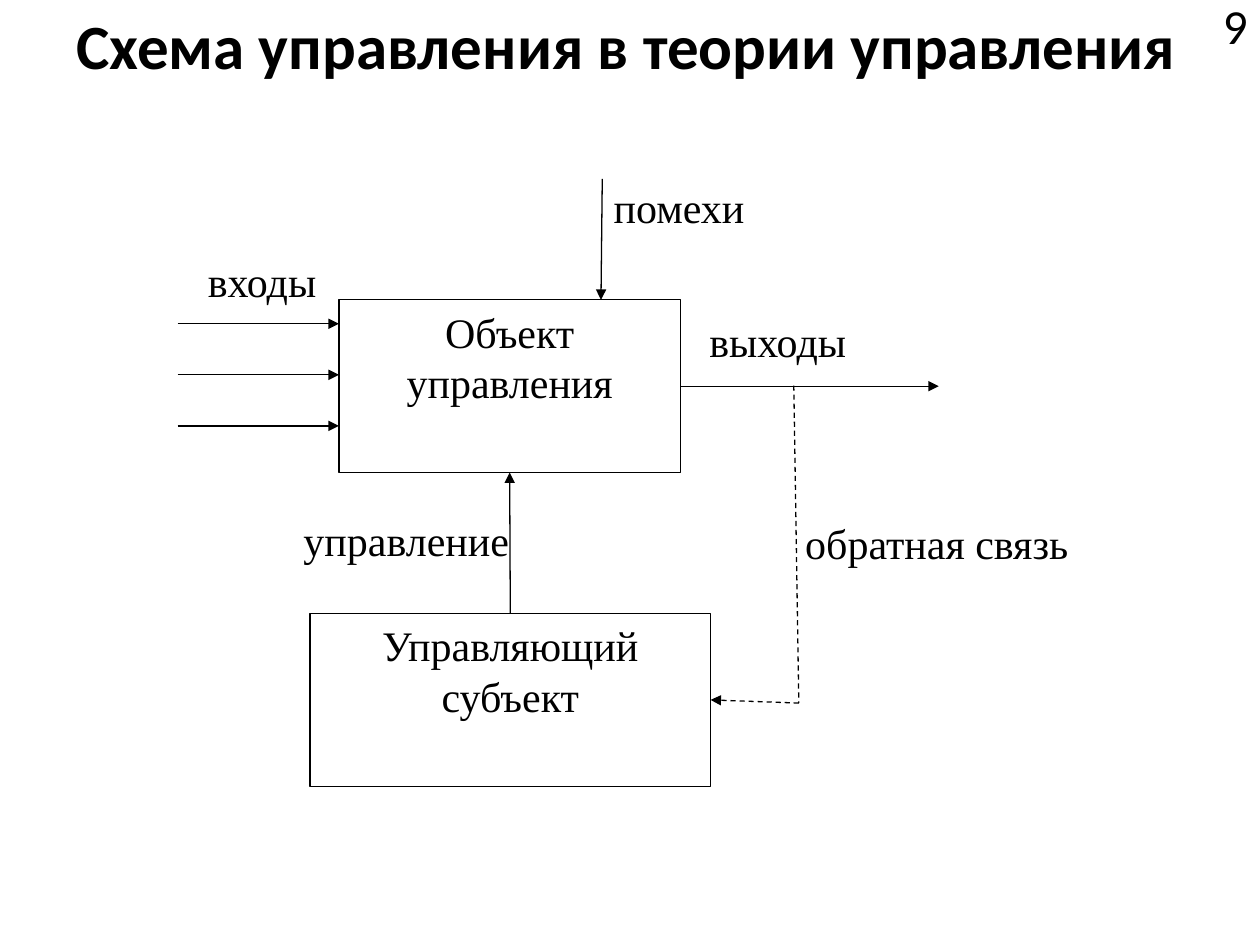
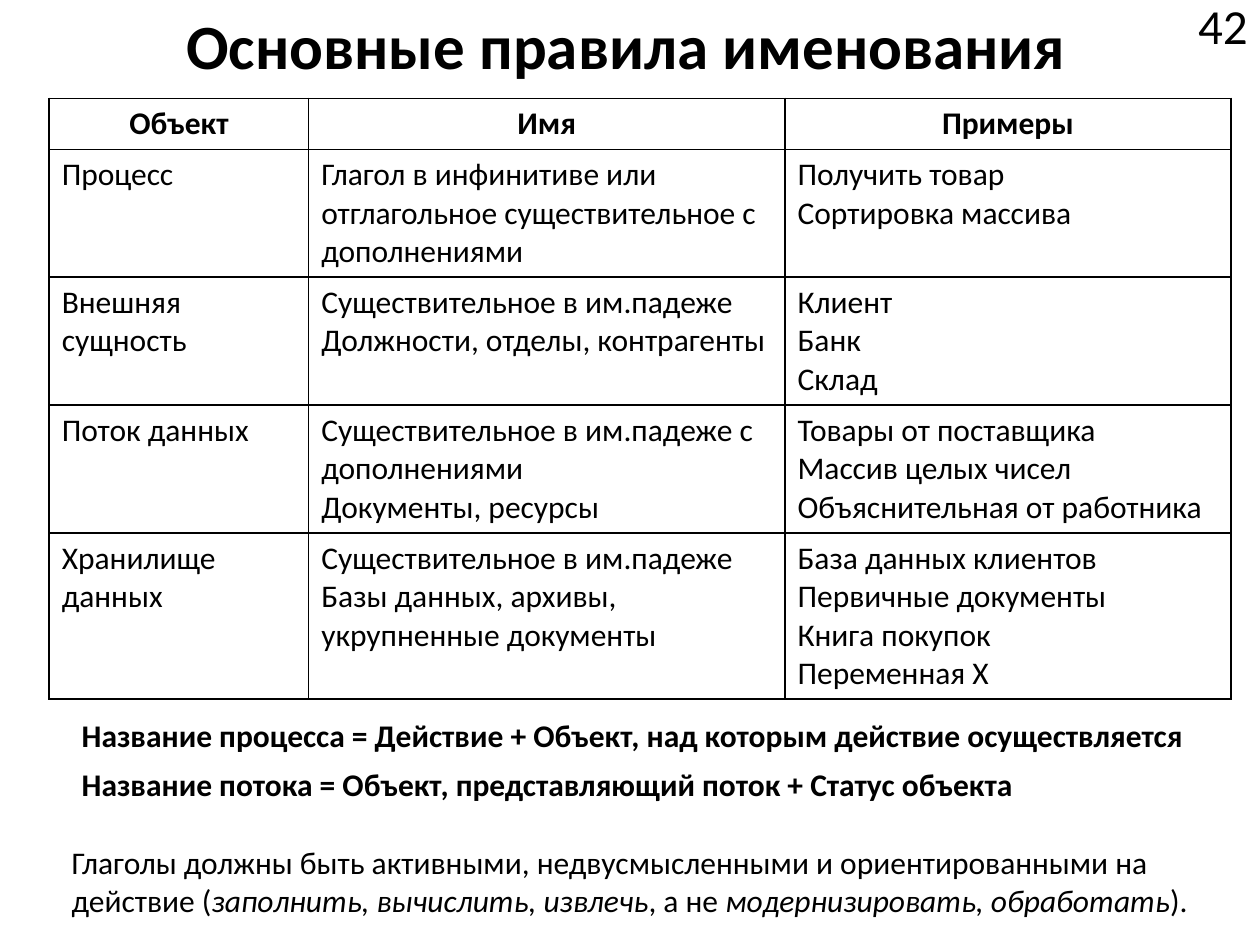
from dataclasses import dataclass

from lxml import etree
from pptx import Presentation
from pptx import util as u
from pptx.dml.color import RGBColor
from pptx.enum import dml, shapes, text
from pptx.oxml.ns import qn

CELL = 0.1  # the slide is a grid of 100 columns and 75 rows
COLUMNS, ROWS = 100, 75
TOP, LEFT, BOTTOM, RIGHT = range(4)
ALIGN = {"l": text.PP_ALIGN.LEFT, "c": text.PP_ALIGN.CENTER, "r": text.PP_ALIGN.RIGHT}


@dataclass(frozen=True)
class Theme:
    ink: RGBColor = RGBColor(0, 0, 0)
    paper: RGBColor = RGBColor(255, 255, 255)
    body_font: str = "Calibri"
    diagram_font: str = "Times New Roman"
    title_size: int = 36
    number_size: int = 28
    diagram_size: int = 24
    body_size: int = 18
    line_width: float = 0.75
    border_width: float = 1


THEME = Theme()


@dataclass(frozen=True)
class Box:
    left: float
    top: float
    width: float
    height: float

    def inner(self, left, top, width, height):
        return Box(self.left + left, self.top + top, width, height)

    def point(self, x, y):
        return cells(self.left + x), cells(self.top + y)

    def lengths(self):
        return [cells(n) for n in (self.left, self.top, self.width, self.height)]


def cells(count):
    return u.Inches(count * CELL)


def style(frame, size, font=THEME.body_font, align="l", bold=False):
    for para in frame.paragraphs:
        para.alignment = ALIGN[align]
        for span in para.runs:
            span.font.name = font
            span.font.size = u.Pt(size)
            span.font.bold = bold
            span.font.color.rgb = THEME.ink


def add_text(page, box, words, size, inset=True, middle=False, **look):
    frame = page.shapes.add_textbox(*box.lengths()).text_frame
    frame.word_wrap = True
    frame.text = words
    if middle:
        frame.vertical_anchor = text.MSO_ANCHOR.MIDDLE
    if not inset:
        frame.margin_left = frame.margin_top = frame.margin_right = frame.margin_bottom = 0
    style(frame, size, **look)
    return frame


def add_heading(page, box, title, number):
    add_text(page, box.inner(4.7, 0, 90, 9.4), title, THEME.title_size, align="c", bold=True)
    add_text(page, box.inner(89.8, 0, 10.2, 3.9), number, THEME.number_size,
             middle=True, align="r")


def add_block(page, box, words):
    block = page.shapes.add_shape(shapes.MSO_SHAPE.RECTANGLE, *box.lengths())
    block.shadow.inherit = False
    block.fill.solid()
    block.fill.fore_color.rgb = THEME.paper
    block.line.color.rgb = THEME.ink
    block.line.width = u.Pt(THEME.line_width)
    frame = block.text_frame
    frame.word_wrap = True
    frame.vertical_anchor = text.MSO_ANCHOR.TOP
    frame.text = words
    style(frame, THEME.diagram_size, THEME.diagram_font, "c")
    return block


def add_line(page, box, start, end, arrow=True, dashed=False, source=None, target=None):
    """Draw a line; source and target are (block, side) pairs to join."""
    line = page.shapes.add_connector(
        shapes.MSO_CONNECTOR.STRAIGHT, *box.point(*start), *box.point(*end))
    if source:
        line.begin_connect(*source)
    if target:
        line.end_connect(*target)
    line.line.color.rgb = THEME.ink
    line.line.width = u.Pt(THEME.line_width)
    if dashed:
        line.line.dash_style = dml.MSO_LINE.DASH
    properties = line.element.spPr
    if arrow:
        etree.SubElement(properties.find(qn("a:ln")), qn("a:tailEnd"), type="triangle")
    etree.SubElement(properties, qn("a:effectLst"))


def add_control_diagram(page, box):
    controlled = add_block(page, box.inner(12.8, 9.6, 27.1, 13.7), "Объект управления")
    subject = add_block(page, box.inner(10.5, 34.5, 31.8, 13.7), "Управляющий субъект")

    for index in range(3):
        row = 11.5 + 4.05 * index
        add_line(page, box, (0, row), (12.8, row))
    add_line(page, box, (33.7, 0), (33.6, 9.6))
    add_line(page, box, (39.9, 16.45), (60.4, 16.45), source=(controlled, RIGHT))
    add_line(page, box, (26.4, 34.5), (26.4, 23.3),
             source=(subject, TOP), target=(controlled, BOTTOM))
    corner = (49.3, 41.6)
    add_line(page, box, (48.9, 16.4), corner, arrow=False, dashed=True)
    add_line(page, box, corner, (42.3, 41.35), dashed=True, target=(subject, RIGHT))

    labels = [
        ("обратная связь", 49.8, 26.9, 26.9, "l"),
        ("входы", 0, 6.1, 13.4, "c"),
        ("выходы", 42.2, 10.8, 13.4, "l"),
        ("помехи", 34.6, 0.2, 13.4, "l"),
        ("управление", 3.9, 26.6, 22.4, "r"),
    ]
    for words, left, top, width, align in labels:
        add_text(page, box.inner(left, top, width, 5.8), words, THEME.diagram_size,
                 inset=False, font=THEME.diagram_font, align=align)


def add_borders(cell):
    properties = cell._tc.get_or_add_tcPr()
    for index, side in enumerate(("lnL", "lnR", "lnT", "lnB")):
        border = etree.Element(qn(f"a:{side}"), w=str(u.Pt(THEME.border_width)))
        fill = etree.SubElement(border, qn("a:solidFill"))
        etree.SubElement(fill, qn("a:srgbClr"), val=str(THEME.ink))
        properties.insert(index, border)


def add_naming_table(page, box):
    rows = [
        ("Объект", "Имя", "Примеры"),
        ("Процесс",
         "Глагол в инфинитиве или отглагольное существительное с дополнениями",
         "Получить товар\nСортировка массива"),
        ("Внешняя сущность",
         "Существительное в им.падеже\nДолжности, отделы, контрагенты",
         "Клиент\nБанк\nСклад"),
        ("Поток данных",
         "Существительное в им.падеже с дополнениями\nДокументы, ресурсы",
         "Товары от поставщика\nМассив целых чисел\nОбъяснительная от работника"),
        ("Хранилище данных",
         "Существительное в им.падеже\nБазы данных, архивы, укрупненные документы",
         "База данных клиентов\nПервичные документы\nКнига покупок\nПеременная X"),
    ]
    line_counts = (1, 3, 3, 3, 4)
    widths = (20.6, 37.8, 35.4)
    table = page.shapes.add_table(len(rows), len(widths), *box.lengths()).table
    table.first_row = table.horz_banding = False
    for column, width in zip(table.columns, widths):
        column.width = cells(width)
    for row, count in zip(table.rows, line_counts):
        row.height = cells(1 + 3.05 * count)
    for r, row in enumerate(rows):
        for c, words in enumerate(row):
            cell = table.cell(r, c)
            cell.text_frame.text = words
            cell.fill.solid()
            cell.fill.fore_color.rgb = THEME.paper
            add_borders(cell)
            header = r == 0
            style(cell.text_frame, THEME.body_size, align="c" if header else "l", bold=header)


def add_naming_notes(page, box):
    formulas = (
        "Название процесса = Действие + Объект, над которым действие осуществляется",
        "Название потока = Объект, представляющий поток + Статус объекта",
    )
    for index, formula in enumerate(formulas):
        add_text(page, box.inner(0.8, 3.9 * index, 89.8, 4), formula,
                 THEME.body_size, bold=True)

    frame = add_text(page, box.inner(0, 10.1, 92.2, 7.1), "", THEME.body_size)
    spans = (
        ("Глаголы должны быть активными, недвусмысленными и ориентированными на действие (",
         False),
        ("заполнить, вычислить, извлечь", True),
        (", а не ", False),
        ("модернизировать, обработать", True),
        (").", False),
    )
    for words, italic in spans:
        span = frame.paragraphs[0].add_run()
        span.text = words
        span.font.italic = italic
    style(frame, THEME.body_size)


def add_page(deck, title, number):
    page = deck.slides.add_slide(deck.slide_layouts[6])
    add_heading(page, Box(0, 0, COLUMNS, ROWS), title, number)
    return page


def main():
    deck = Presentation()
    deck.slide_width, deck.slide_height = cells(COLUMNS), cells(ROWS)

    page = add_page(deck, "Cхема управления в теории управления", "9")
    add_control_diagram(page, Box(14.1, 14.2, 76.7, 48.2))

    page = add_page(deck, "Основные правила именования", "42")
    add_naming_table(page, Box(3.9, 7.8, 93.8, 47))
    add_naming_notes(page, Box(4.7, 56.3, 92.2, 17.2))

    deck.save("out.pptx")


if __name__ == "__main__":
    main()
